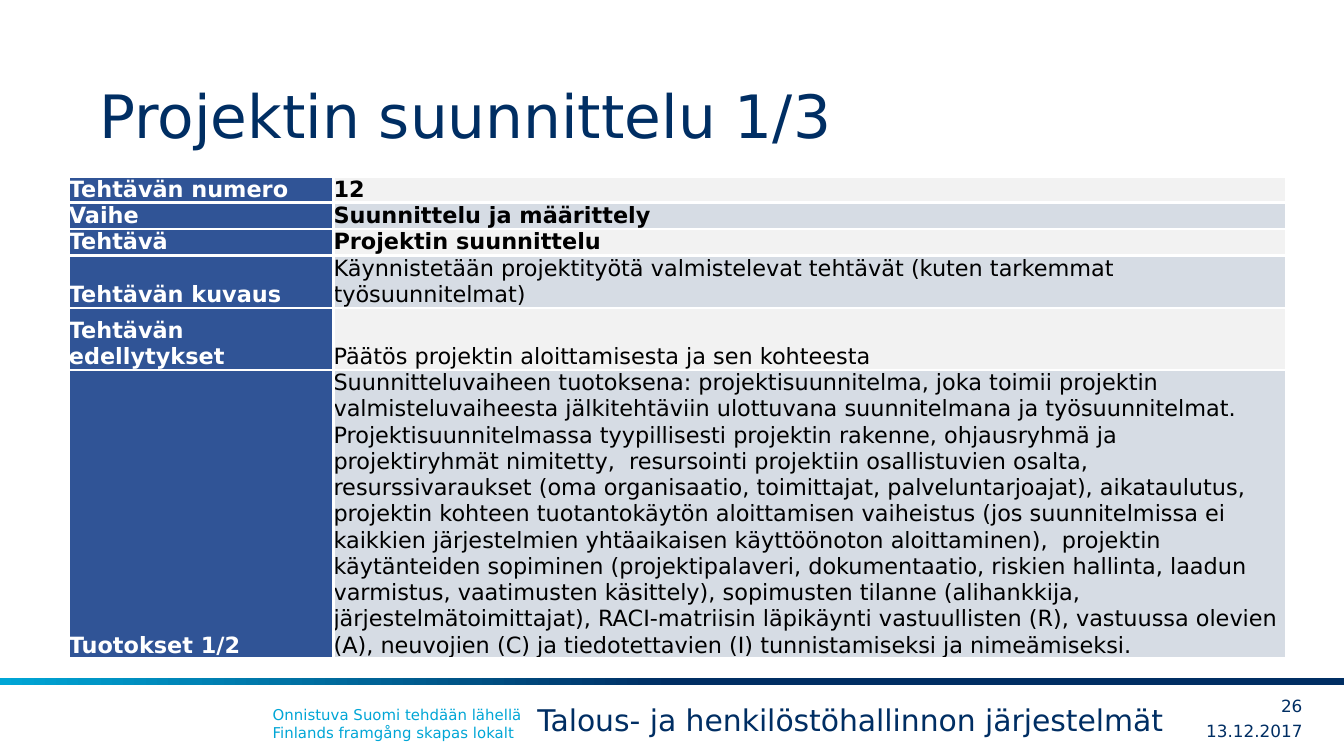
from dataclasses import dataclass

import pptx
import pptx.dml.color
import pptx.enum.shapes
import pptx.enum.text
import pptx.oxml
import pptx.oxml.ns
import pptx.util

Pt = pptx.util.Pt
RGBColor = pptx.dml.color.RGBColor
Align = pptx.enum.text.PP_ALIGN
Anchor = pptx.enum.text.MSO_ANCHOR
Fit = pptx.enum.text.MSO_AUTO_SIZE

NAVY = RGBColor(0x00, 0x2E, 0x63)
CYAN = RGBColor(0x00, 0xA6, 0xD6)
BLUE = RGBColor(0x30, 0x54, 0x96)
LIGHT = RGBColor(0xF2, 0xF2, 0xF2)
GREY = RGBColor(0xD6, 0xDC, 0xE4)
WHITE = RGBColor(0xFF, 0xFF, 0xFF)
BLACK = RGBColor(0x00, 0x00, 0x00)
FONT = "DejaVu Sans"


@dataclass
class Row:
    label: str
    text: str
    height: float
    bold: bool = False


@dataclass
class Label:
    text: str
    box: tuple[float, float, float, float]
    size: float
    color: RGBColor
    tight: bool = False


# Sentences of the outputs cell
OUTPUTS = [
    "Suunnitteluvaiheen tuotoksena: projektisuunnitelma, joka toimii "
    "projektin valmisteluvaiheesta jälkitehtäviin ulottuvana "
    "suunnitelmana ja työsuunnitelmat.",
    "Projektisuunnitelmassa tyypillisesti projektin rakenne, ohjausryhmä ja "
    "projektiryhmät nimitetty,  resursointi projektiin osallistuvien osalta, "
    "resurssivaraukset (oma organisaatio, toimittajat, palveluntarjoajat), "
    "aikataulutus, projektin kohteen tuotantokäytön aloittamisen vaiheistus "
    "(jos suunnitelmissa ei kaikkien järjestelmien yhtäaikaisen käyttöönoton "
    "aloittaminen),  projektin käytänteiden sopiminen (projektipalaveri, "
    "dokumentaatio, riskien hallinta, laadun varmistus, vaatimusten "
    "käsittely),",
    "sopimusten tilanne (alihankkija, järjestelmätoimittajat), "
    "RACI-matriisin läpikäynti vastuullisten (R), vastuussa olevien (A), "
    "neuvojien (C) ja tiedotettavien (I) tunnistamiseksi ja nimeämiseksi.",
]

ROWS = [
    Row("Tehtävän numero", "12", 14, True),
    Row("Vaihe", "Suunnittelu ja määrittely", 14, True),
    Row("Tehtävä", "Projektin suunnittelu", 14, True),
    Row("Tehtävän kuvaus",
        "Käynnistetään projektityötä valmistelevat tehtävät "
        "(kuten tarkemmat työsuunnitelmat)", 28),
    Row("Tehtävän edellytykset",
        "Päätös projektin aloittamisesta ja sen kohteesta", 33.2),
    Row("Tuotokset 1/2", " ".join(OUTPUTS), 153.8),
]

LABELS = [
    Label("Onnistuva Suomi tehdään lähellä\vFinlands framgång skapas lokalt",
          (139, 374.4, 471, 26.6), 8, CYAN),
    Label("13.12.2017", (626.4, 383.8, 71.3, 15.8), 9, NAVY, True),
    Label("26", (666.7, 370.1, 31, 15.8), 9, NAVY, True),
    Label("Talous- ja henkilöstöhallinnon järjestelmät",
          (280.8, 372.2, 360, 26.6), 16, NAVY),
]


def apply(item, form: dict) -> None:
    for name, value in form.items():
        setattr(item, name, value)


def style(frame, size: float, color: RGBColor, bold: bool = False) -> None:
    for para in frame.paragraphs:
        for run in para.runs:
            apply(run.font, {"name": FONT, "size": Pt(size), "bold": bold})
            run.font.color.rgb = color


def inset(side: float, end: float) -> dict:
    return {"margin_left": Pt(side), "margin_right": Pt(side),
            "margin_top": Pt(end), "margin_bottom": Pt(end)}


def add_label(slide, label: Label) -> None:
    box = slide.shapes.add_textbox(*map(Pt, label.box))
    frame = box.text_frame
    frame.text = label.text
    frame.word_wrap = True
    if label.tight:
        apply(frame, inset(0, 0) | {"vertical_anchor": Anchor.MIDDLE})
        frame.paragraphs[0].alignment = Align.RIGHT
    style(frame, label.size, label.color)


def set_edges(cell) -> None:
    props = cell._tc.get_or_add_tcPr()
    space = pptx.oxml.ns.nsdecls("a")
    for i, side in enumerate(("lnL", "lnR", "lnT", "lnB")):
        props.insert(i, pptx.oxml.parse_xml(
            f'<a:{side} {space} w="{Pt(1.5)}"><a:solidFill>'
            f'<a:srgbClr val="{WHITE}"/></a:solidFill></a:{side}>'))


def fill_cell(cell, text: str, back: RGBColor, color: RGBColor,
              bold: bool) -> None:
    cell.text = text
    apply(cell, inset(0, 0) | {"vertical_anchor": Anchor.BOTTOM})
    cell.fill.solid()
    cell.fill.fore_color.rgb = back
    style(cell.text_frame, 12, color, bold)
    set_edges(cell)


def add_grid(slide, rows: list[Row]) -> None:
    height = sum(row.height for row in rows)
    grid = slide.shapes.add_table(
        len(rows), 2, Pt(36.9), Pt(94.5), Pt(652.3), Pt(height)).table
    apply(grid, {"first_row": False, "horz_banding": False})
    for col, width in zip(grid.columns, (141.8, 510.5)):
        col.width = Pt(width)
    for i, row in enumerate(rows):
        grid.rows[i].height = Pt(row.height)
        fill_cell(grid.cell(i, 0), row.label, BLUE, WHITE, True)
        fill_cell(grid.cell(i, 1), row.text, (LIGHT, GREY)[i % 2], BLACK,
                  row.bold)


def add_bar(slide) -> None:
    bar = slide.shapes.add_shape(
        pptx.enum.shapes.MSO_SHAPE.RECTANGLE, 0, Pt(363.4), Pt(720), Pt(3.7))
    bar.shadow.inherit = False
    bar.line.fill.background()
    bar.fill.gradient()
    bar.fill.gradient_angle = 180
    stops = ((0.5, NAVY), (1, CYAN))
    for stop, (place, color) in zip(bar.fill.gradient_stops, stops):
        stop.position = place
        stop.color.rgb = color


def set_title(slide, text: str) -> None:
    title = slide.shapes.title
    apply(title, {"left": Pt(53.3), "top": Pt(16.6),
                  "width": Pt(612.7), "height": Pt(67.7)})
    frame = title.text_frame
    frame.text = text
    apply(frame, inset(0, 3.6) | {"vertical_anchor": Anchor.BOTTOM,
                                  "auto_size": Fit.NONE, "word_wrap": True})
    frame.paragraphs[0].alignment = Align.LEFT
    style(frame, 32, NAVY)


def main() -> None:
    deck = pptx.Presentation()
    apply(deck, {"slide_width": Pt(720), "slide_height": Pt(405)})
    slide = deck.slides.add_slide(deck.slide_layouts[5])

    # Title and task table
    set_title(slide, "Projektin suunnittelu 1/3")
    add_grid(slide, ROWS)

    # Footer
    add_bar(slide)
    for label in LABELS:
        add_label(slide, label)

    deck.save("out.pptx")


if __name__ == "__main__":
    main()
